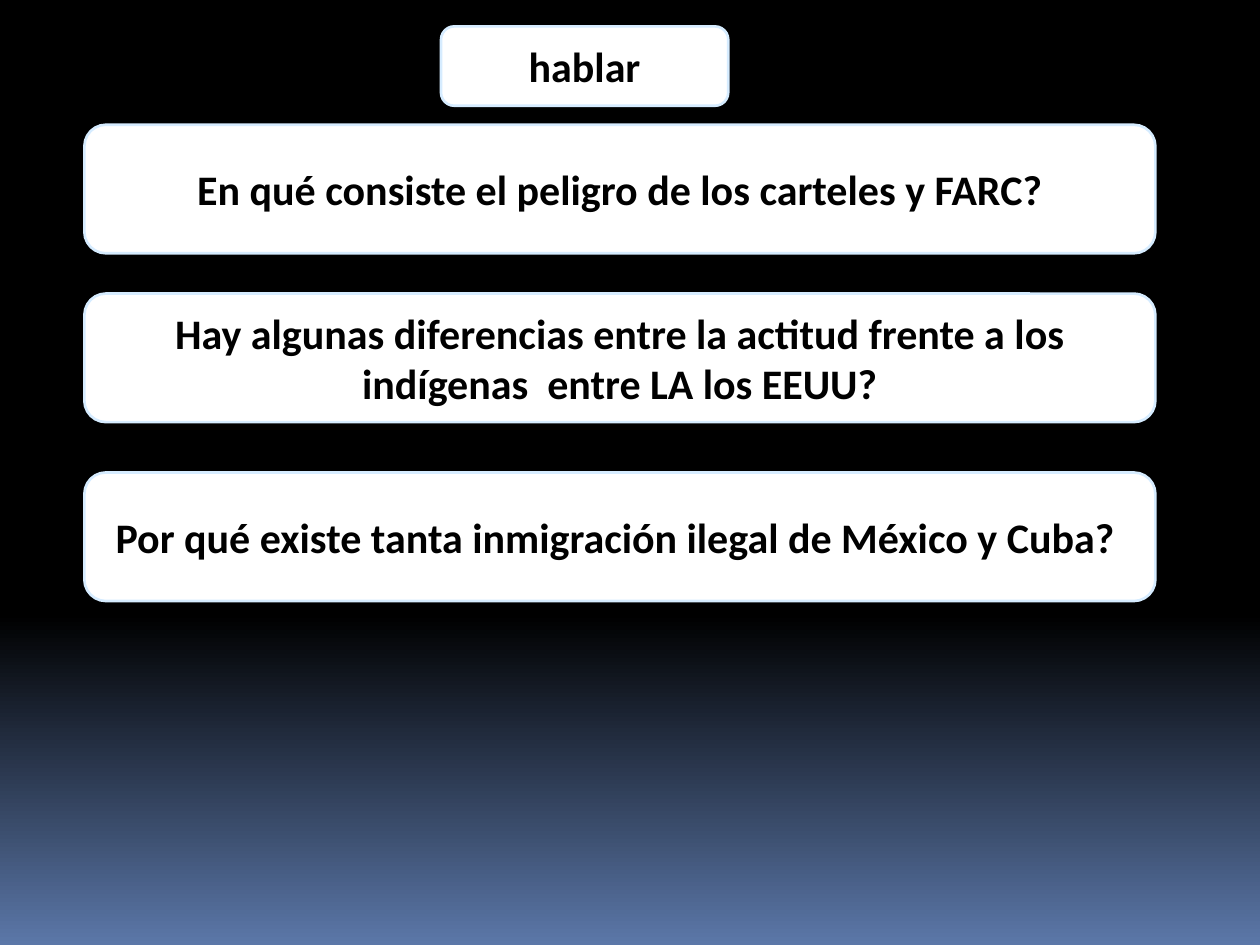
from pptx import Presentation
from pptx.dml.color import RGBColor
from pptx.enum.shapes import MSO_SHAPE as Shape
from pptx.enum.text import MSO_ANCHOR as Anchor, PP_ALIGN as Align
from pptx.util import Inches, Pt

BLACK = RGBColor(0x00, 0x00, 0x00)
WHITE = RGBColor(0xFF, 0xFF, 0xFF)
BLUE = RGBColor(0x5B, 0x77, 0xA8)
PALE_BLUE = RGBColor(0xD6, 0xEC, 0xFF)

QUESTIONS = [
    (0.99, "En qué consiste el peligro de los carteles y FARC?"),
    (2.33, "Hay algunas diferencias entre la actitud frente a los "
           "indígenas  entre LA los EEUU?"),
    (3.75, "Por qué existe tanta inmigración ilegal de México y Cuba? "),
]


def set_background(slide):
    """Black down to 65 % of the height, then fading to blue."""
    fill = slide.background.fill
    fill.gradient()
    fill.gradient_angle = 270
    for stop, position, color in zip(fill.gradient_stops, (0.65, 1), (BLACK, BLUE)):
        stop.position = position
        stop.color.rgb = color


def add_card(slide, text, left, top, width, height):
    """Add a white rounded card with bold centred text."""
    sp = slide.shapes.add_shape(Shape.ROUNDED_RECTANGLE, Inches(left),
                                Inches(top), Inches(width), Inches(height))
    sp.shadow.inherit = False
    sp.fill.solid()
    sp.fill.fore_color.rgb = WHITE
    sp.line.color.rgb = PALE_BLUE
    sp.line.width = Pt(1.5)

    tf = sp.text_frame
    tf.word_wrap = True
    tf.vertical_anchor = Anchor.MIDDLE
    tf.text = text
    p = tf.paragraphs[0]
    p.alignment = Align.CENTER
    font = p.runs[0].font
    font.name = "Calibri"
    font.size = Pt(24)
    font.bold = True
    font.color.rgb = BLACK


def main():
    prs = Presentation()
    prs.slide_width, prs.slide_height = Inches(10), Inches(7.5)
    slide = prs.slides.add_slide(prs.slide_layouts[6])
    set_background(slide)

    # Heading card
    add_card(slide, "hablar", 3.5, 0.21, 2.28, 0.63)

    # Question cards
    for top, question in QUESTIONS:
        add_card(slide, question, 0.67, top, 8.5, 1.02)

    prs.save("out.pptx")


if __name__ == "__main__":
    main()
